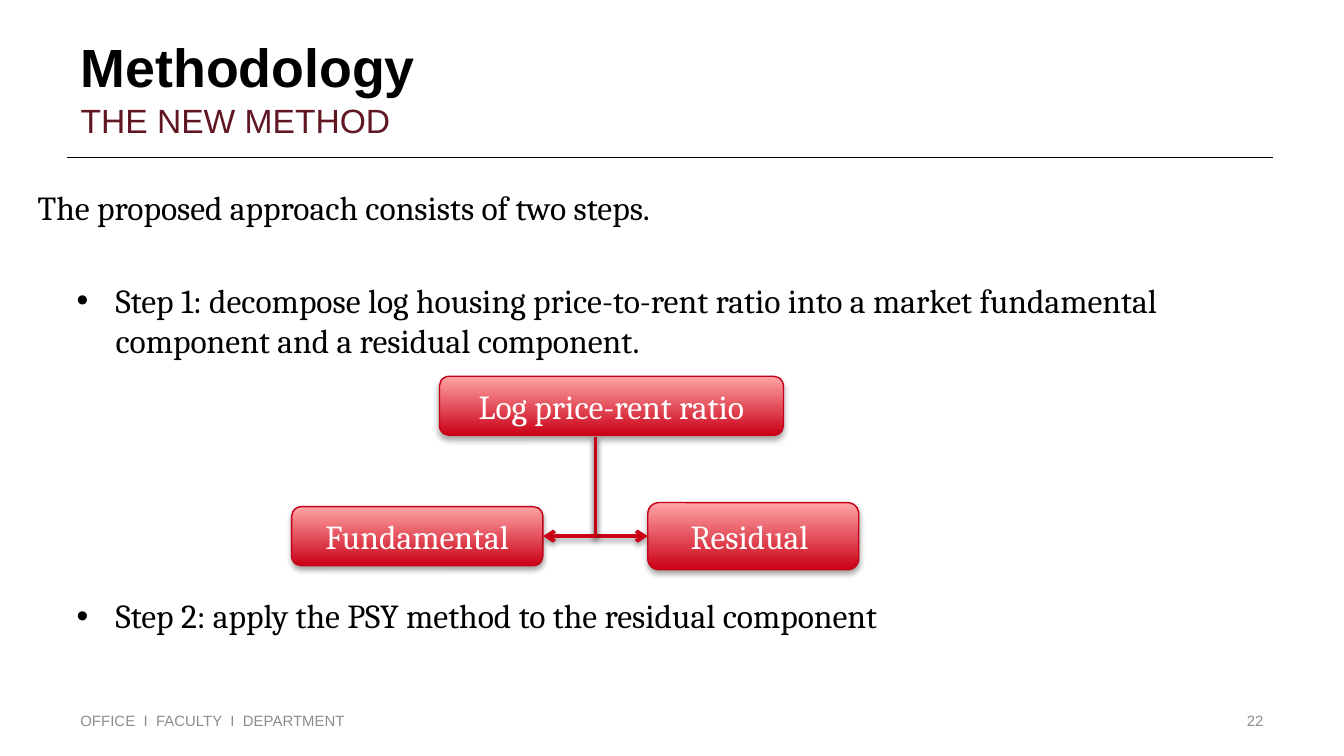
from lxml.etree import SubElement
from pptx import Presentation
from pptx.dml.color import RGBColor
from pptx.enum.shapes import MSO_CONNECTOR, MSO_SHAPE
from pptx.enum.text import MSO_ANCHOR, MSO_AUTO_SIZE, PP_ALIGN
from pptx.oxml.ns import qn
from pptx.util import Inches, Pt

SLIDE_WIDTH = 10
SLIDE_HEIGHT = SLIDE_WIDTH * 9 / 16
COLORS = {
    "black": "000000", "white": "FFFFFF", "maroon": "611723", "gray": "8C8C8C",
    "red": "CA0016", "pink": "FFA4A5", "outline": "C60016",
}
TITLE = "Methodology"
SUBTITLE = "THE NEW METHOD"
FOOTER = "OFFICE  I  FACULTY  I  DEPARTMENT"
PAGE_NUMBER = "22"
# text, bulleted, space before in points
STEPS = [
    ("The proposed approach consists of two steps.", False, 0),
    ("Step 1: decompose log housing price-to-rent ratio into a market "
     "fundamental component and a residual component.", True, 25),
    ("Step 2: apply the PSY method to the residual component", True, 123),
]
# text, (left, top, width, height)
NODES = [
    ("Log price-rent ratio", (3.27, 2.8, 2.56, 0.44)),
    ("Fundamental", (2.17, 3.77, 1.87, 0.44)),
    ("Residual ", (4.82, 3.74, 1.57, 0.5)),
]
TRUNK_X, TRUNK_TOP, BRANCH_Y = 4.43, 3.25, 3.99
BRANCH_ENDS = [4.82, 4.04]


def rgb(name):
    return RGBColor.from_string(COLORS[name])


def write(frame, text, size=18, font="Cambria", color="black", bold=False,
          align=PP_ALIGN.LEFT, anchor=MSO_ANCHOR.MIDDLE, bullet=False,
          before=0, after=0, new=False):
    """Fill the first paragraph of a frame, or add one when new is set."""
    frame.word_wrap = True
    frame.auto_size = MSO_AUTO_SIZE.NONE
    frame.vertical_anchor = anchor
    paragraph = frame.add_paragraph() if new else frame.paragraphs[0]
    props = paragraph._p.get_or_add_pPr()
    props.set("marL", str(Inches(0.58 if bullet else 0)))
    props.set("indent", str(Inches(-0.29 if bullet else 0)))
    if bullet:
        SubElement(props, qn("a:buFont"), typeface="Arial")
        SubElement(props, qn("a:buChar"), char="•")
    else:
        SubElement(props, qn("a:buNone"))
    paragraph.alignment = align
    paragraph.space_before, paragraph.space_after = Pt(before), Pt(after)
    run = paragraph.add_run()
    run.text = text
    run.font.name, run.font.size, run.font.bold = font, Pt(size), bold
    run.font.color.rgb = rgb(color)


def place(shape, left, top, width, height):
    shape.left, shape.top = Inches(left), Inches(top)
    shape.width, shape.height = Inches(width), Inches(height)
    return shape.text_frame


def add_shadow(shape, distance, opacity):
    """Cast a soft black shadow straight down."""
    props = shape._element.spPr
    effects = props.find(qn("a:effectLst"))
    if effects is None:
        effects = SubElement(props, qn("a:effectLst"))
    shadow = SubElement(effects, qn("a:outerShdw"), blurRad=str(Pt(3.1)),
                        dist=str(Pt(distance)), dir="5400000", rotWithShape="0")
    color = SubElement(shadow, qn("a:srgbClr"), val=COLORS["black"])
    SubElement(color, qn("a:alpha"), val=str(opacity * 1000))


def add_node(slide, text, box):
    node = slide.shapes.add_shape(MSO_SHAPE.ROUNDED_RECTANGLE, *map(Inches, box))
    node.fill.gradient()
    node.fill.gradient_angle = 90
    for stop, color in zip(node.fill.gradient_stops, ("red", "pink")):
        stop.color.rgb = rgb(color)
    node.line.color.rgb, node.line.width = rgb("outline"), Pt(0.75)
    node.shadow.inherit = False
    add_shadow(node, 1.8, 35)
    write(node.text_frame, text, color="white", align=PP_ALIGN.CENTER)


def add_branch(slide, end_x):
    """Draw a one-bend arrow down the trunk and out to end_x.

    The bend shape runs across then down, so it is turned a quarter
    about its centre, and mirrored for the branch to the right.
    """
    length, reach = BRANCH_Y - TRUNK_TOP, abs(end_x - TRUNK_X)
    center_x, center_y = (TRUNK_X + end_x) / 2, (TRUNK_TOP + BRANCH_Y) / 2
    to_right = end_x > TRUNK_X
    half = length / 2 * (-1 if to_right else 1)
    branch = slide.shapes.add_connector(
        MSO_CONNECTOR.ELBOW,
        Inches(center_x - half), Inches(center_y - reach / 2),
        Inches(center_x + half), Inches(center_y + reach / 2))
    props = branch._element.spPr
    props.find(qn("a:prstGeom")).set("prst", "bentConnector2")
    props.find(qn("a:xfrm")).set("rot", str((270 if to_right else 90) * 60000))
    branch.line.color.rgb, branch.line.width = rgb("red"), Pt(2)
    SubElement(branch.line._get_or_add_ln(), qn("a:tailEnd"), type="arrow")
    add_shadow(branch, 1.6, 38)


def main():
    deck = Presentation()
    deck.slide_width, deck.slide_height = Inches(SLIDE_WIDTH), Inches(SLIDE_HEIGHT)
    slide = deck.slides.add_slide(deck.slide_layouts.get_by_name("Two Content"))
    title, steps, subtitle = slide.placeholders

    rule = slide.shapes.add_connector(
        MSO_CONNECTOR.STRAIGHT, Inches(0.5), Inches(1.17), Inches(9.47), Inches(1.17))
    rule.line.color.rgb, rule.line.width = rgb("black"), Pt(0.75)
    SubElement(rule._element.spPr, qn("a:effectLst"))

    write(place(title, 0.5, 0.23, 7, 0.53), TITLE, size=28.8, font="Arial", bold=True)
    write(place(subtitle, 0.5, 0.69, 7, 0.44), SUBTITLE, font="Arial",
          color="maroon", anchor=MSO_ANCHOR.TOP, after=3)
    steps_frame = place(steps, 0.18, 1.34, 9.18, 3.91)
    for index, (text, bullet, before) in enumerate(STEPS):
        write(steps_frame, text, bullet=bullet, before=before, after=3,
              anchor=MSO_ANCHOR.TOP, new=index > 0)

    for text, left, align in ((FOOTER, 0.5, PP_ALIGN.LEFT),
                              (PAGE_NUMBER, 7.17, PP_ALIGN.RIGHT)):
        footer = slide.shapes.add_textbox(
            Inches(left), Inches(5.21), Inches(2.33), Inches(0.3))
        write(footer.text_frame, text, size=8, font="Arial", color="gray", align=align)

    for text, box in NODES:
        add_node(slide, text, box)
    for end_x in BRANCH_ENDS:
        add_branch(slide, end_x)
    deck.save("out.pptx")


if __name__ == "__main__":
    main()
